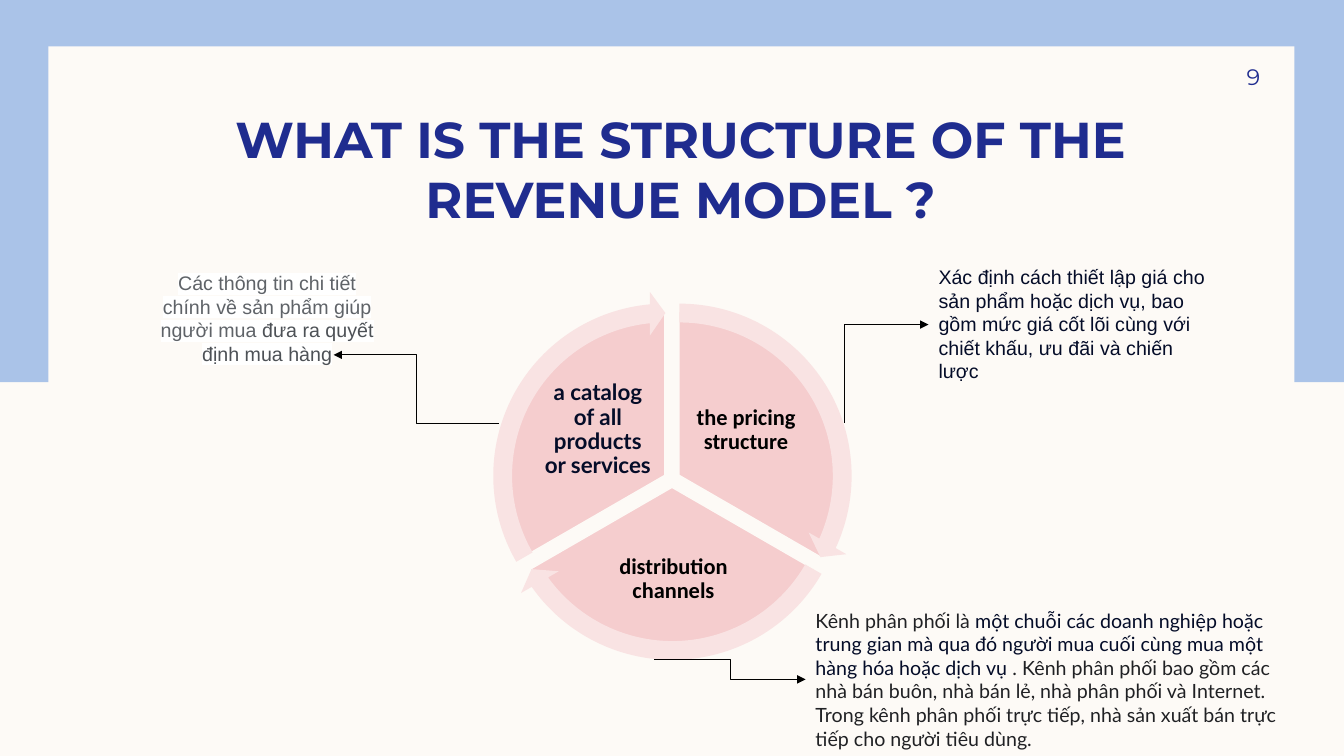
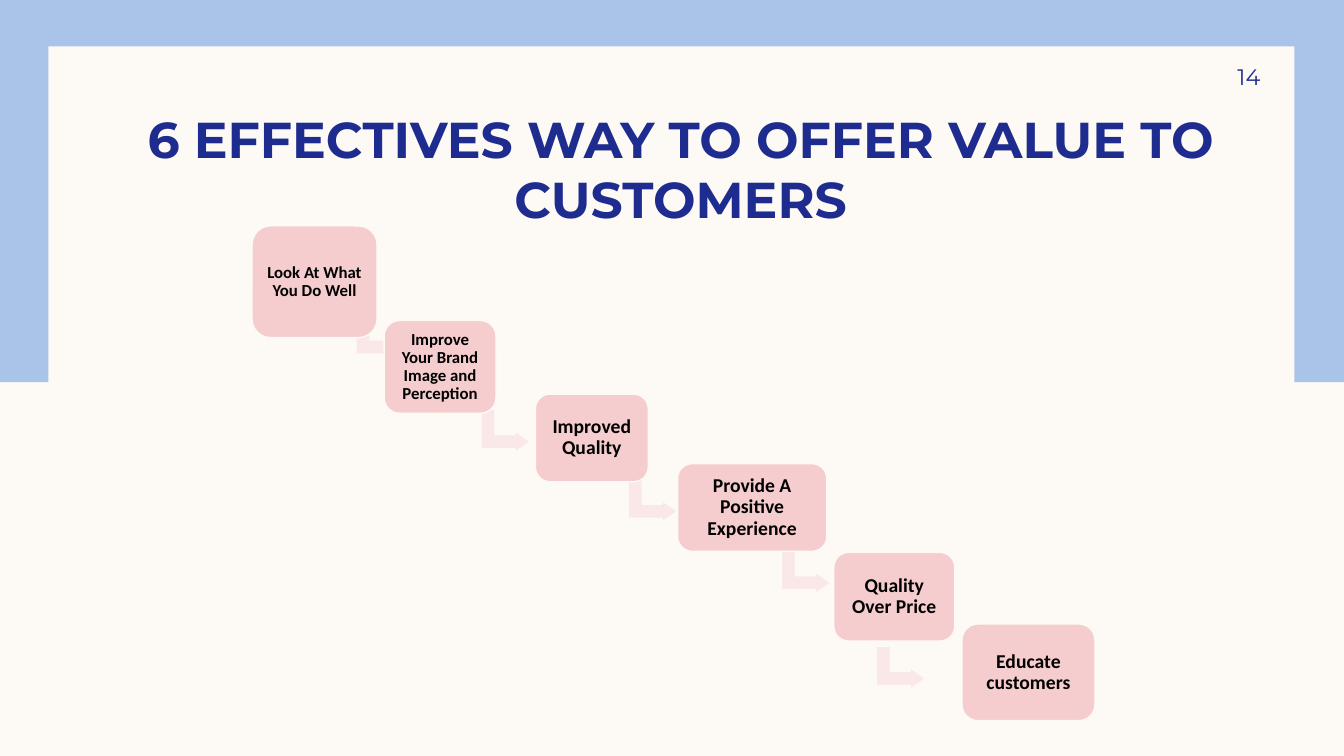
from lxml import etree
from pptx import Presentation
from pptx.dml.color import RGBColor
from pptx.enum.shapes import MSO_CONNECTOR, MSO_SHAPE
from pptx.enum.text import MSO_ANCHOR as Anchor, MSO_AUTO_SIZE as AutoSize, PP_ALIGN as Align
from pptx.oxml.ns import qn
from pptx.util import Inches, Pt

COLORS = {
    "cream": "FDFAF6", "blue": "AAC3E8", "navy": "1F2C8F", "ink": "040C28",
    "pink": "F5CDCE", "pale pink": "F9E3E3", "arrow pink": "FAE8E8",
    "black": "000000", "white": "FFFFFF", "charcoal": "202124",
    "gray": "5F6368", "dark gray": "4D5156",
}
FULL_TURN = 216  # 360 degrees in the units of shape adjustments


def color(name):
    return RGBColor.from_string(COLORS[name])


def inches(*lengths):
    return [Inches(length) for length in lengths]


def write(frame, text, size=14, font="Arial", fill="black", bold=False, align=Align.LEFT,
          anchor=Anchor.TOP, margins=(0.1, 0.05, 0.1, 0.05), spacing=1.0,
          highlight=None, fit=AutoSize.NONE):
    """Fill a text frame; text is a string or a list of (string, colour name)."""
    frame.word_wrap = True
    frame.auto_size = fit
    frame.vertical_anchor = anchor
    (frame.margin_left, frame.margin_top,
     frame.margin_right, frame.margin_bottom) = inches(*margins)
    paragraph = frame.paragraphs[0]
    paragraph.alignment = align
    paragraph.line_spacing = spacing
    for part, part_fill in [(text, fill)] if isinstance(text, str) else text:
        run = paragraph.add_run()
        run.text = part
        run.font.size = Pt(size)
        run.font.name = font
        run.font.bold = bold
        run.font.color.rgb = color(part_fill)
        if highlight:
            mark = etree.Element(qn("a:highlight"))
            etree.SubElement(mark, qn("a:srgbClr"), val=COLORS[highlight])
            run.font._element.find(qn("a:solidFill")).addnext(mark)


class Deck:
    LABEL = dict(font="Calibri", bold=True, align=Align.CENTER,
                 anchor=Anchor.MIDDLE, spacing=0.9)

    def __init__(self):
        self.presentation = Presentation()
        self.presentation.slide_width, self.presentation.slide_height = inches(13.33, 7.5)
        self.layout = self.presentation.slide_layouts[5]
        background = self.presentation.slide_master.background.fill
        background.solid()
        background.fore_color.rgb = color("cream")
        self.slide = None

    def start_slide(self, title, number):
        self.slide = self.presentation.slides.add_slide(self.layout)
        if len(self.presentation.slides) == 1:
            self.add_frame_to_layout()
        shape = self.slide.shapes.title
        shape.left, shape.top, shape.width, shape.height = inches(1, 1.16, 11.5, 1.11)
        write(shape.text_frame, title, size=36, font="Montserrat", fill="navy", bold=True,
              align=Align.CENTER, anchor=Anchor.BOTTOM, margins=(0.1, 0, 0.1, 0))
        self.text((11.33, 0.5, 1.17, 0.52), number, size=16, font="Montserrat", fill="navy",
                  align=Align.RIGHT, anchor=Anchor.MIDDLE, margins=(0.1, 0.05, 0, 0.05))

    def add_frame_to_layout(self):
        """Draw the blue band and cream panel, then move them behind the layout."""
        frame = [((0, 0, 13.33, 3.79), "blue"), ((0.48, 0.46, 12.36, 6.59), "cream")]
        for index, (box, fill) in enumerate(frame):
            element = self.shape(MSO_SHAPE.RECTANGLE, box, fill)._element
            element.nvSpPr.cNvPr.id = 100 + index
            self.layout.shapes.element.insert(2 + index, element)

    def text(self, box, text, **style):
        shape = self.slide.shapes.add_textbox(*inches(*box))
        write(shape.text_frame, text, **style)

    def label(self, box, text, **style):
        self.text(box, text, **{**self.LABEL, **style})

    def shape(self, kind, box, fill, outline=None, adjustments=(), rotation=0):
        shape = self.slide.shapes.add_shape(kind, *inches(*box))
        shape.shadow.inherit = False
        shape.fill.solid()
        shape.fill.fore_color.rgb = color(fill)
        if outline:
            shape.line.color.rgb = color(outline)
            shape.line.width = Pt(1)
        else:
            shape.line.fill.background()
        for index, value in enumerate(adjustments):
            shape.adjustments[index] = value
        shape.rotation = rotation
        return shape

    def elbow(self, start, end, geometry="bentConnector3", arrow="tailEnd"):
        connector = self.slide.shapes.add_connector(
            MSO_CONNECTOR.ELBOW, *inches(*start, *end))
        connector.line.color.rgb = color("black")
        connector.line.width = Pt(0.5)
        properties = connector._element.spPr
        properties.find(qn("a:prstGeom")).set("prst", geometry)
        etree.SubElement(properties.find(qn("a:ln")), qn(f"a:{arrow}"), type="triangle")
        etree.SubElement(properties, qn("a:effectLst"))

    def step(self, box, text, size):
        shape = self.shape(MSO_SHAPE.ROUNDED_RECTANGLE, box, "pink", "cream", [0.167])
        write(shape.text_frame, text, size=size, margins=(0.05,) * 4, **self.LABEL)

    def save(self):
        self.presentation.save("out.pptx")


def revenue_model(deck):
    deck.start_slide("WHAT IS THE STRUCTURE OF THE REVENUE MODEL ?", "9")

    # Slice start, slice corner, arrow corner; each slice is a third of the turn
    slices = [(162, (5.11, 3.09), (4.91, 2.89)),
              (18, (5.04, 3.21), (4.84, 3.01)),
              (90, (4.97, 3.09), (4.77, 2.89))]
    for start, corner, _ in slices:
        end = (start + FULL_TURN / 3) % FULL_TURN
        deck.shape(MSO_SHAPE.PIE, (*corner, 3.25, 3.25), "pink", "cream", [start, end])
    for start, _, corner in slices:
        tip = (start + 68.73) % FULL_TURN
        deck.shape(MSO_SHAPE.CIRCULAR_ARROW, (*corner, 3.66, 3.66), "pale pink",
                   adjustments=[0.051, 3.275, tip, start, 0.059])

    tight = dict(size=16, margins=(0.02,) * 4)
    deck.label((6.82, 3.78, 1.16, 0.97), "the pricing structure", **tight)
    deck.label((5.81, 5.32, 1.74, 0.85), "distribution channels", **tight)
    deck.label((5.35, 3.78, 1.16, 0.97), "a catalog of all products or services",
               font="Lato", fill="ink", **tight)

    grow = AutoSize.SHAPE_TO_FIT_TEXT
    deck.text((1.41, 2.64, 2.48, 1.04), [
        ("Các thông tin chi tiết chính về sản phẩm giúp người mua", "gray"),
        (" đưa ra quyết định mua hàng", "dark gray"),
    ], align=Align.CENTER, highlight="white", fit=grow)
    deck.text((9.21, 2.58, 2.91, 1.28),
              "Xác định cách thiết lập giá cho sản phẩm hoặc dịch vụ, bao gồm mức giá "
              "cốt lõi cùng với chiết khấu, ưu đãi và chiến lược", fill="ink", fit=grow)
    deck.text((7.99, 5.99, 4.93, 1.51), [
        ("Kênh phân phối là ", "charcoal"),
        ("một chuỗi các doanh nghiệp hoặc trung gian mà qua đó người mua cuối cùng "
         "mua một hàng hóa hoặc dịch vụ", "ink"),
        (" . Kênh phân phối bao gồm các nhà bán buôn, nhà bán lẻ, nhà phân phối và "
         "Internet. Trong kênh phân phối trực tiếp, nhà sản xuất bán trực tiếp cho "
         "người tiêu dùng.", "charcoal"),
    ], font="Lato", fit=grow)

    deck.elbow((4.95, 4.2), (3.31, 3.52))
    deck.elbow((9.21, 3.22), (8.38, 4.2), "bentConnector2", "headEnd")
    deck.elbow((6.49, 6.54), (7.99, 6.74))


def customer_value(deck):
    deck.start_slide("6 EFFECTIVES WAY TO OFFER VALUE TO CUSTOMERS", "14")

    # Box, text, text size, corner of the arrow to the next step
    steps = [
        ((2.5, 2.24, 1.24, 1.11), "Look At What You Do Well", 12, (3.56, 3.09)),
        ((3.81, 3.18, 1.11, 0.92), "Improve Your Brand Image and Perception", 12, (4.8, 4.03)),
        ((5.31, 3.91, 1.12, 0.87), "Improved Quality", 14, (6.26, 4.72)),
        ((6.72, 4.6, 1.48, 0.87), "Provide A Positive Experience", 14, (7.78, 5.43)),
        ((8.27, 5.48, 1.2, 0.88), "Quality Over Price", 14, (8.72, 6.38)),
        ((9.54, 6.19, 1.32, 0.96), "Educate customers", 14, None),
    ]
    for box, text, size, arrow in steps:
        if arrow:
            deck.shape(MSO_SHAPE.BENT_UP_ARROW, (*arrow, 0.43, 0.49), "arrow pink", "cream",
                       [0.328, 0.25, 0.358], rotation=90)
        deck.step(box, text, size)


def main():
    deck = Deck()
    revenue_model(deck)
    customer_value(deck)
    deck.save()


if __name__ == "__main__":
    main()
